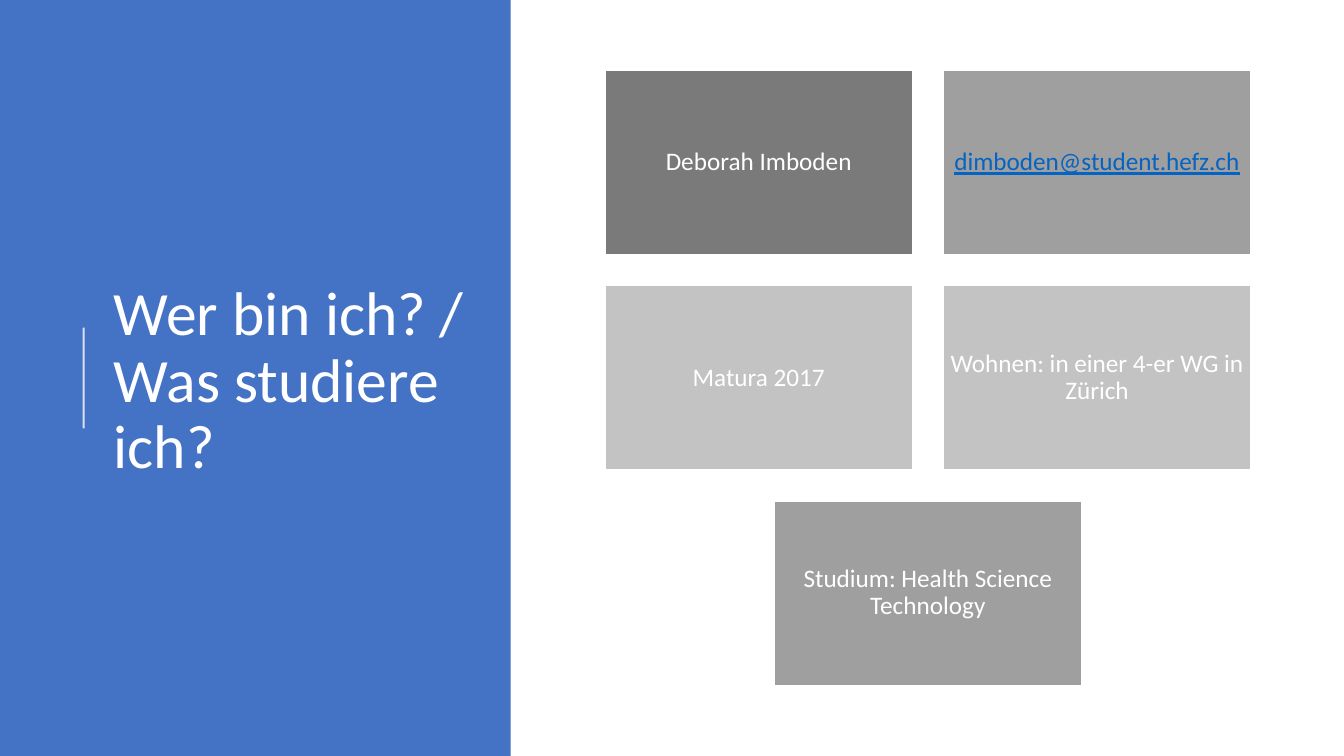
from dataclasses import dataclass

from lxml import etree
from pptx import Presentation
from pptx.dml.color import RGBColor
from pptx.enum.shapes import MSO_CONNECTOR, MSO_SHAPE
from pptx.enum.text import MSO_ANCHOR, PP_ALIGN
from pptx.oxml.ns import qn
from pptx.util import Inches, Pt

RECTANGLE = MSO_SHAPE.RECTANGLE
STRAIGHT = MSO_CONNECTOR.STRAIGHT
MIDDLE = MSO_ANCHOR.MIDDLE
LEFT, CENTER = PP_ALIGN.LEFT, PP_ALIGN.CENTER

SLIDE_WIDTH, SLIDE_HEIGHT = 13.33, 7.5
PANEL_SHARE = 0.38
GRID_LEFT, GRID_TOP = 6, 0.7
CARD_WIDTH, CARD_HEIGHT = 3.05, 1.83
GAP = 0.305
COLUMN_STEP, ROW_STEP = CARD_WIDTH + GAP, CARD_HEIGHT + GAP

FONT = "Calibri"
WHITE, BLUE, LINK_BLUE = "FFFFFF", "4472C4", "0563C1"
DARK_GREY, MID_GREY, LIGHT_GREY = "7A7A7A", "9F9F9F", "C3C3C3"


@dataclass(frozen=True)
class Card:
    """A box of the grid; column 0.5 lies halfway between two columns."""
    text: str
    column: float
    row: int
    fill: str
    color: str = WHITE
    underline: bool = False


CARDS = [
    Card("Deborah Imboden", 0, 0, DARK_GREY),
    Card("dimboden@student.hefz.ch", 1, 0, MID_GREY, LINK_BLUE, True),
    Card("Matura 2017", 0, 1, LIGHT_GREY),
    Card("Wohnen: in einer 4-er WG in Zürich", 1, 1, LIGHT_GREY),
    Card("Studium: Health Science Technology", 0.5, 2, MID_GREY),
]


def rgb(color: str) -> RGBColor:
    return RGBColor.from_string(color)


def write_text(box, text: str, *, size: float, color: str = WHITE, align=LEFT,
               underline: bool = False, inset: float = 0.1, vertical_inset: float = 0.05,
               space_after: float = 0) -> None:
    frame = box.text_frame
    frame.word_wrap = True
    frame.vertical_anchor = MIDDLE
    frame.margin_left = frame.margin_right = Inches(inset)
    frame.margin_top = frame.margin_bottom = Inches(vertical_inset)
    para = frame.paragraphs[0]
    para.alignment = align
    para.line_spacing = 0.9
    para.space_after = Pt(space_after)
    span = para.add_run()
    span.text = text
    span.font.name = FONT
    span.font.size = Pt(size)
    span.font.underline = underline
    span.font.color.rgb = rgb(color)


def add_rectangle(page, left: float, top: float, width: float, height: float,
                  fill: str, outline: str | None = None):
    box = page.shapes.add_shape(RECTANGLE, Inches(left), Inches(top),
                                Inches(width), Inches(height))
    box.shadow.inherit = False
    box.fill.solid()
    box.fill.fore_color.rgb = rgb(fill)
    if outline:
        box.line.color.rgb = rgb(outline)
        box.line.width = Pt(1)
    else:
        box.line.fill.background()
    return box


def add_accent_line(page, x: float, top: float, bottom: float, opacity: int) -> None:
    """Draw a white vertical line; opacity is a percentage."""
    line = page.shapes.add_connector(STRAIGHT, Inches(x), Inches(bottom),
                                     Inches(x), Inches(top))
    line.line.color.rgb = rgb(WHITE)
    line.line.width = Pt(1.5)
    properties = line._element.spPr
    color = properties.find(".//" + qn("a:srgbClr"))
    etree.SubElement(color, qn("a:alpha")).set("val", str(opacity * 1000))
    etree.SubElement(properties, qn("a:effectLst"))


def add_card(page, card: Card) -> None:
    box = add_rectangle(page, GRID_LEFT + card.column * COLUMN_STEP,
                        GRID_TOP + card.row * ROW_STEP,
                        CARD_WIDTH, CARD_HEIGHT, card.fill, WHITE)
    write_text(box, card.text, size=18, color=card.color, align=CENTER,
               underline=card.underline, inset=0.07, vertical_inset=0.07, space_after=6.3)


def main() -> None:
    deck = Presentation()
    deck.slide_width, deck.slide_height = Inches(SLIDE_WIDTH), Inches(SLIDE_HEIGHT)
    page = deck.slides.add_slide(deck.slide_layouts[6])

    add_rectangle(page, 0, 0, SLIDE_WIDTH * PANEL_SHARE, SLIDE_HEIGHT, BLUE)
    add_accent_line(page, 0.83, 3.25, 4.25, opacity=80)
    title = page.shapes.add_textbox(Inches(1.03), Inches(0.78), Inches(3.69), Inches(6.02))
    write_text(title, "Wer bin ich? / Was studiere ich?", size=44)

    for card in CARDS:
        add_card(page, card)
    deck.save("out.pptx")


if __name__ == "__main__":
    main()
